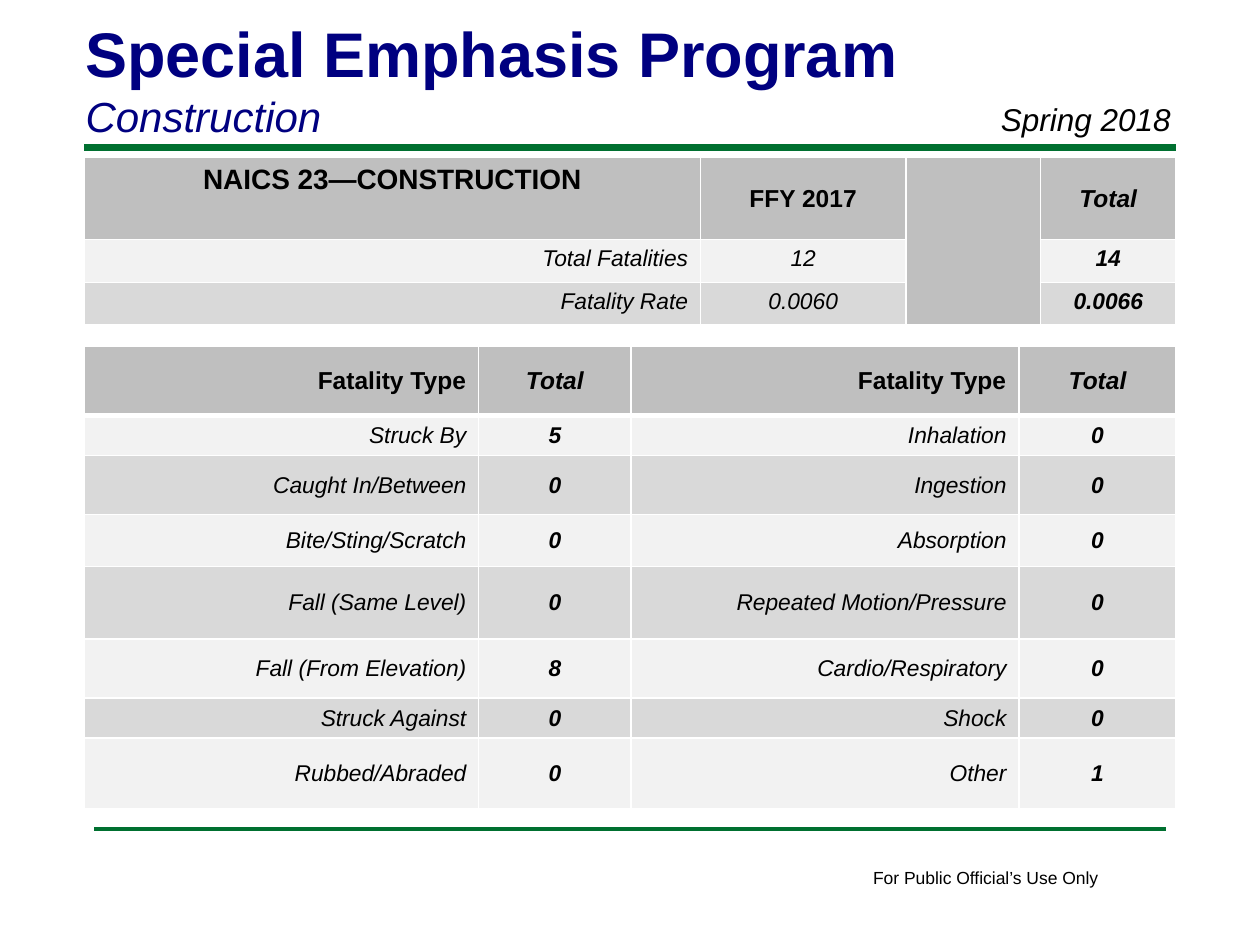
from dataclasses import dataclass

import pptx
import pptx.dml.color
import pptx.enum.shapes
import pptx.enum.text
import pptx.oxml
import pptx.oxml.ns
import pptx.util
from pptx.util import Cm

RGB = pptx.dml.color.RGBColor.from_string
ALIGN = pptx.enum.text.PP_ALIGN
ANCHOR = pptx.enum.text.MSO_ANCHOR


@dataclass(frozen=True)
class Theme:
    font: str = "Arial"
    navy: str = "000080"
    green: str = "007030"
    ink: str = "000000"
    border: str = "FFFFFF"
    header: str = "BFBFBF"
    bands: tuple = ("F2F2F2", "D9D9D9")
    title: float = 36
    subtitle: float = 24
    date: float = 18
    section: float = 16
    heading: float = 14
    body: float = 13
    footer: float = 10


THEME = Theme()

FATALITY_TYPES = [
    ("Struck By", "5", "Inhalation", "0"),
    ("Caught In/Between", "0", "Ingestion", "0"),
    ("Bite/Sting/Scratch", "0", "Absorption", "0"),
    ("Fall (Same Level)", "0", "Repeated Motion/Pressure", "0"),
    ("Fall (From Elevation)", "8", "Cardio/Respiratory", "0"),
    ("Struck Against", "0", "Shock", "0"),
    ("Rubbed/Abraded", "0", "Other", "1"),
]


def style(paragraph, size, color=THEME.ink, bold=False, italic=False, align=ALIGN.LEFT):
    paragraph.alignment = align
    font = paragraph.font
    font.name, font.size = THEME.font, pptx.util.Pt(size)
    font.bold, font.italic = bold, italic
    font.color.rgb = RGB(color)


def add_title(slide, program, sector):
    title = slide.shapes.title
    title.left, title.top, title.width, title.height = Cm(1.47), Cm(0.15), Cm(20.96), Cm(2.82)
    frame = title.text_frame
    frame.auto_size = pptx.enum.text.MSO_AUTO_SIZE.NONE
    frame.vertical_anchor = ANCHOR.BOTTOM
    frame.text = f"{program}\n{sector}"
    style(frame.paragraphs[0], THEME.title, THEME.navy, bold=True)
    style(frame.paragraphs[1], THEME.subtitle, THEME.navy, italic=True)


def add_label(slide, text, left, top, width, height, size, wrap=True, **look):
    label = slide.shapes.add_textbox(left, top, width, height)
    label.text_frame.word_wrap = wrap
    label.text_frame.text = text
    style(label.text_frame.paragraphs[0], size, **look)


def add_rule(slide, left, right, y, weight):
    rule = slide.shapes.add_connector(
        pptx.enum.shapes.MSO_CONNECTOR.STRAIGHT, left, y, right, y)
    rule.line.color.rgb = RGB(THEME.green)
    rule.line.width = pptx.util.Pt(weight)
    pptx.oxml.ns.qn("a:effectLst")
    effects = pptx.oxml.parse_xml(f'<a:effectLst {pptx.oxml.ns.nsdecls("a")}/>')
    rule.element.spPr.append(effects)


def set_borders(cell, top=1, bottom=1):
    properties = cell._tc.get_or_add_tcPr()
    for side, weight in (("L", 1), ("R", 1), ("T", top), ("B", bottom)):
        properties.append(pptx.oxml.parse_xml(
            f'<a:ln{side} {pptx.oxml.ns.nsdecls("a")} w="{pptx.util.Pt(weight)}">'
            f'<a:solidFill><a:srgbClr val="{THEME.border}"/></a:solidFill></a:ln{side}>'))


def add_grid(slide, top, widths, heights, rows, header_rule=1):
    """Add a table with a grey header row and alternating body bands."""
    table = slide.shapes.add_table(
        len(rows), len(widths), Cm(1.7), top, sum(widths), sum(heights)).table
    table.horz_banding = False
    for column, width in zip(table.columns, widths):
        column.width = width
    for r, (texts, height) in enumerate(zip(rows, heights)):
        table.rows[r].height = height
        for c, text in enumerate(texts):
            cell = table.cell(r, c)
            set_borders(cell, top=header_rule if r == 1 else 1,
                        bottom=header_rule if r == 0 else 1)
            cell.fill.solid()
            cell.fill.fore_color.rgb = RGB(THEME.bands[(r - 1) % 2] if r else THEME.header)
            cell.text = text
    return table


def add_summary(slide):
    table = add_grid(
        slide, Cm(3.18),
        [Cm(12.42), Cm(4.14), Cm(2.72), Cm(2.72)],
        [Cm(1.65), Cm(0.86), Cm(0.86)],
        [("NAICS 23—CONSTRUCTION", "FFY 2017", "", "Total"),
         ("Total Fatalities", "12", "", "14"),
         ("Fatality Rate", "0.0060", "", "0.0066")])
    for r, row in enumerate(table.rows):
        for c, cell in enumerate(row.cells):
            size = THEME.body if r else THEME.heading if c else THEME.section
            style(cell.text_frame.paragraphs[0], size,
                  bold=r == 0 or c == 3, italic=r > 0 or c == 3,
                  align=ALIGN.RIGHT if r and c == 0 else ALIGN.CENTER)
            if r == 0 and c:
                cell.vertical_anchor = ANCHOR.MIDDLE
            if c == 2:
                cell.margin_top = cell.margin_bottom = 0
    table.cell(0, 2).merge(table.cell(2, 2))


def add_fatality_types(slide):
    heights = (1.4, 0.79, 1.19, 1.04, 1.47, 1.19, 0.79, 1.42)
    table = add_grid(
        slide, Cm(6.98),
        [Cm(7.95), Cm(3.07), Cm(7.82), Cm(3.17)],
        [Cm(height) for height in heights],
        [("Fatality Type", "Total") * 2] + FATALITY_TYPES,
        header_rule=3)
    for r, row in enumerate(table.rows):
        for c, cell in enumerate(row.cells):
            is_total = c % 2 == 1
            cell.vertical_anchor = ANCHOR.MIDDLE
            style(cell.text_frame.paragraphs[0], THEME.body if r else THEME.heading,
                  bold=r == 0 or is_total, italic=r > 0 or is_total,
                  align=ALIGN.CENTER if is_total else ALIGN.RIGHT)


def main():
    deck = pptx.Presentation()
    deck.slide_width, deck.slide_height = Cm(25.4), Cm(19.05)
    slide = deck.slides.add_slide(deck.slide_layouts.get_by_name("Title Only"))
    add_rule(slide, Cm(1.7), Cm(23.7), Cm(2.97), 4)
    add_rule(slide, Cm(1.9), Cm(23.5), Cm(16.71), 2)
    add_label(slide, "For Public Official’s Use Only", Cm(17.35), Cm(17.35),
              Cm(5.1), Cm(0.69), THEME.footer, wrap=False)
    add_title(slide, "Special Emphasis Program", "Construction")
    add_summary(slide)
    add_fatality_types(slide)
    add_label(slide, "Spring 2018", Cm(17.98), Cm(1.9), Cm(5.87), Cm(1.02),
              THEME.date, italic=True, align=ALIGN.RIGHT)
    deck.save("out.pptx")


if __name__ == "__main__":
    main()
